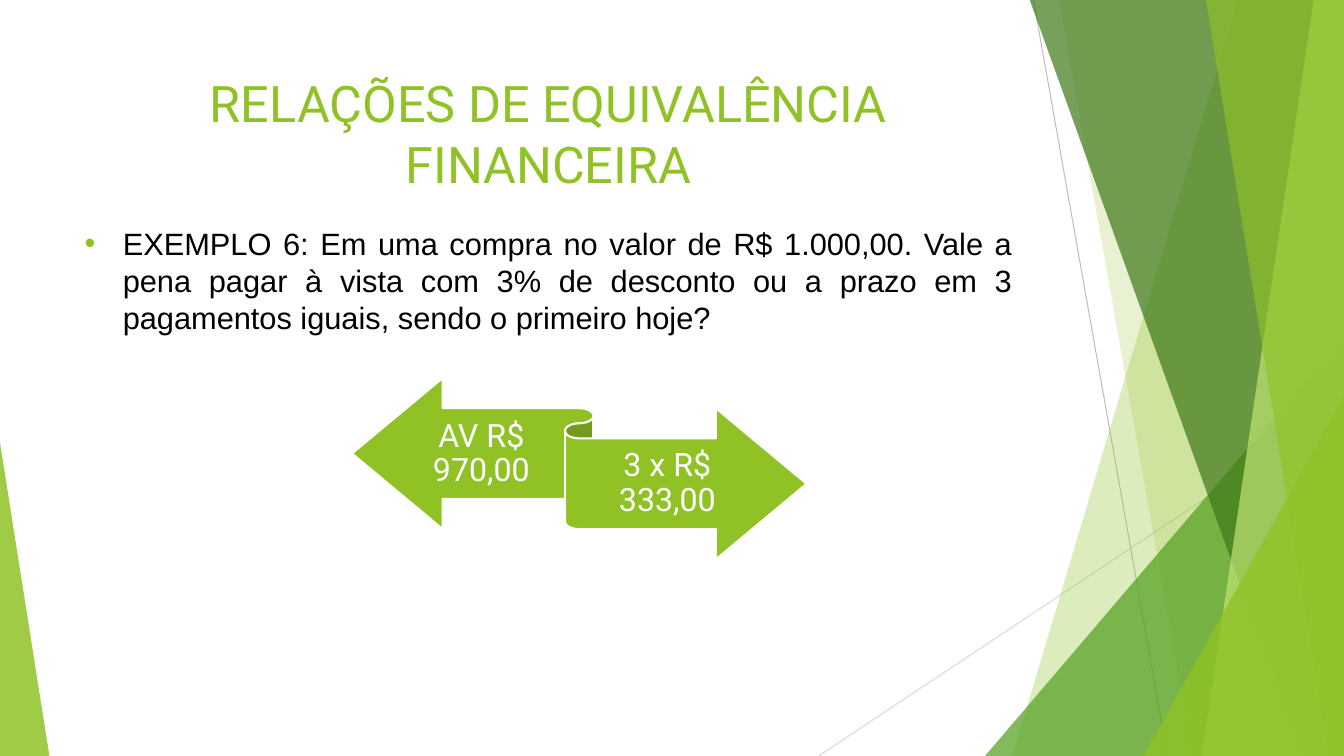
from lxml import etree
from pptx import Presentation
from pptx import util as u
from pptx.dml.color import RGBColor
from pptx.enum import shapes, text
from pptx.oxml.ns import qn

GREEN = "90C226"
WIDE, HIGH, TOP = 13.33, 7.5, -0.01


def rgb(code):
    return RGBColor.from_string(code)


def sub(node, tag, **attrs):
    return etree.SubElement(node, qn(tag), attrs)


def write(frame, words, size, color, font="Roboto", align="CENTER",
          anchor="TOP", inset=None, space=None, bullet=None):
    """Fill a text frame; inset is (left, top, right, bottom) in inches."""
    frame.word_wrap = True
    frame.auto_size = text.MSO_AUTO_SIZE.NONE
    frame.vertical_anchor = text.MSO_ANCHOR[anchor]
    if inset:
        (frame.margin_left, frame.margin_top,
         frame.margin_right, frame.margin_bottom) = map(u.Inches, inset)
    para = frame.paragraphs[0]
    para.text = words
    para.alignment = text.PP_ALIGN[align]
    if space:
        para.line_spacing = space
    if bullet:
        props = para._p.get_or_add_pPr()
        indent = u.Inches(0.38)
        props.set("marL", str(indent))
        props.set("indent", str(-indent))
        sub(sub(props, "a:buClr"), "a:srgbClr", val=bullet)
        sub(props, "a:buFont", typeface="Arial")
        sub(props, "a:buChar", char="•")
    run = para.runs[0].font
    run.size, run.name, run.color.rgb = u.Pt(size), font, rgb(color)


class Page:
    def __init__(self, deck):
        self.slide = deck.slides.add_slide(deck.slide_layouts[5])
        self.items = self.slide.shapes

    def paint(self, shape, color, alpha=100):
        shape.shadow.inherit = False
        shape.fill.solid()
        shape.fill.fore_color.rgb = rgb(color)
        shape.line.fill.background()
        if alpha < 100:
            tone = shape.fill._xPr.find(".//" + qn("a:srgbClr"))
            sub(tone, "a:alpha", val=str(alpha * 1000))

    def line(self, start, end, color):
        link = self.items.add_connector(
            shapes.MSO_CONNECTOR.STRAIGHT, *map(u.Inches, start + end))
        link.line.color.rgb = rgb(color)
        link.line.width = u.Pt(0.75)
        sub(link._element.spPr, "a:effectLst")

    def band(self, top, base, color, alpha):
        """Draw a band from the right edge to a slanted left side."""
        pts = [(u.Inches(x), u.Inches(y)) for x, y in
               [(top, TOP), (WIDE, TOP), (WIDE, HIGH), (base, HIGH)]]
        pen = self.items.build_freeform(*pts[0], scale=1.0)
        pen.add_line_segments(pts[1:], close=True)
        self.paint(pen.convert_to_shape(), color, alpha)

    def shape(self, kind, box, color, alpha=100):
        item = self.items.add_shape(shapes.MSO_SHAPE[kind], *map(u.Inches, box))
        self.paint(item, color, alpha)
        return item

    def wedge(self, box, tip, color, alpha):
        self.shape("ISOSCELES_TRIANGLE", box, color, alpha).adjustments[0] = tip

    def title(self, box, words, **style):
        head = self.items.title
        head.left, head.top, head.width, head.height = map(u.Inches, box)
        write(head.text_frame, words, **style)

    def label(self, box, words, **style):
        item = self.items.add_textbox(*map(u.Inches, box))
        write(item.text_frame, words, **style)


def main():
    deck = Presentation()
    deck.slide_width, deck.slide_height = u.Inches(WIDE), u.Inches(HIGH)
    page = Page(deck)

    page.line((10.25, 0), (11.58, HIGH), "BFBFBF")
    page.line((WIDE, 4.03), (8.12, HIGH), "D9D9D9")
    page.band(12.28, 10.04, GREEN, 30)
    page.band(10.5, 11.83, GREEN, 20)
    page.wedge((9.77, 3.33, 3.56, 4.17), 1, "54A021", 72)
    page.band(10.21, 12.91, "3F7819", 70)
    page.band(13.03, 11.92, "C0E474", 70)
    page.band(11.96, 13.18, GREEN, 65)
    page.wedge((11.34, 3.93, 1.99, 3.57), 1, GREEN, 80)
    page.wedge((0, 4.39, 0.49, 3.11), 0, GREEN, 85)

    page.title((0.74, 0.67, 9.4, 1.44), "RELAÇÕES DE EQUIVALÊNCIA FINANCEIRA",
               size=36, color=GREEN, inset=(0.1, 0.05, 0.1, 0.05))
    page.label((0.74, 2.18, 9.4, 4.24),
               "EXEMPLO 6: Em uma compra no valor de R$ 1.000,00. Vale a pena "
               "pagar à vista com 3% de desconto ou a prazo em 3 pagamentos "
               "iguais, sendo o primeiro hoje?",
               size=22, color="000000", font="Arial", align="JUSTIFY",
               bullet=GREEN)

    ribbon = page.shape("LEFT_RIGHT_RIBBON", (3.49, 3.75, 4.51, 1.8), GREEN)
    ribbon.line.color.rgb = rgb("FFFFFF")
    ribbon.line.width = u.Pt(1.5)
    for box, words in [((4.03, 4.07, 1.49, 0.88), "AV R$ 970,00"),
                       ((5.74, 4.36, 1.76, 0.88), "3 x R$ 333,00")]:
        page.label(box, words, size=23, color="FFFFFF", anchor="MIDDLE",
                   inset=(0, 0.09, 0, 0.1), space=0.9)

    deck.save("out.pptx")


if __name__ == "__main__":
    main()
